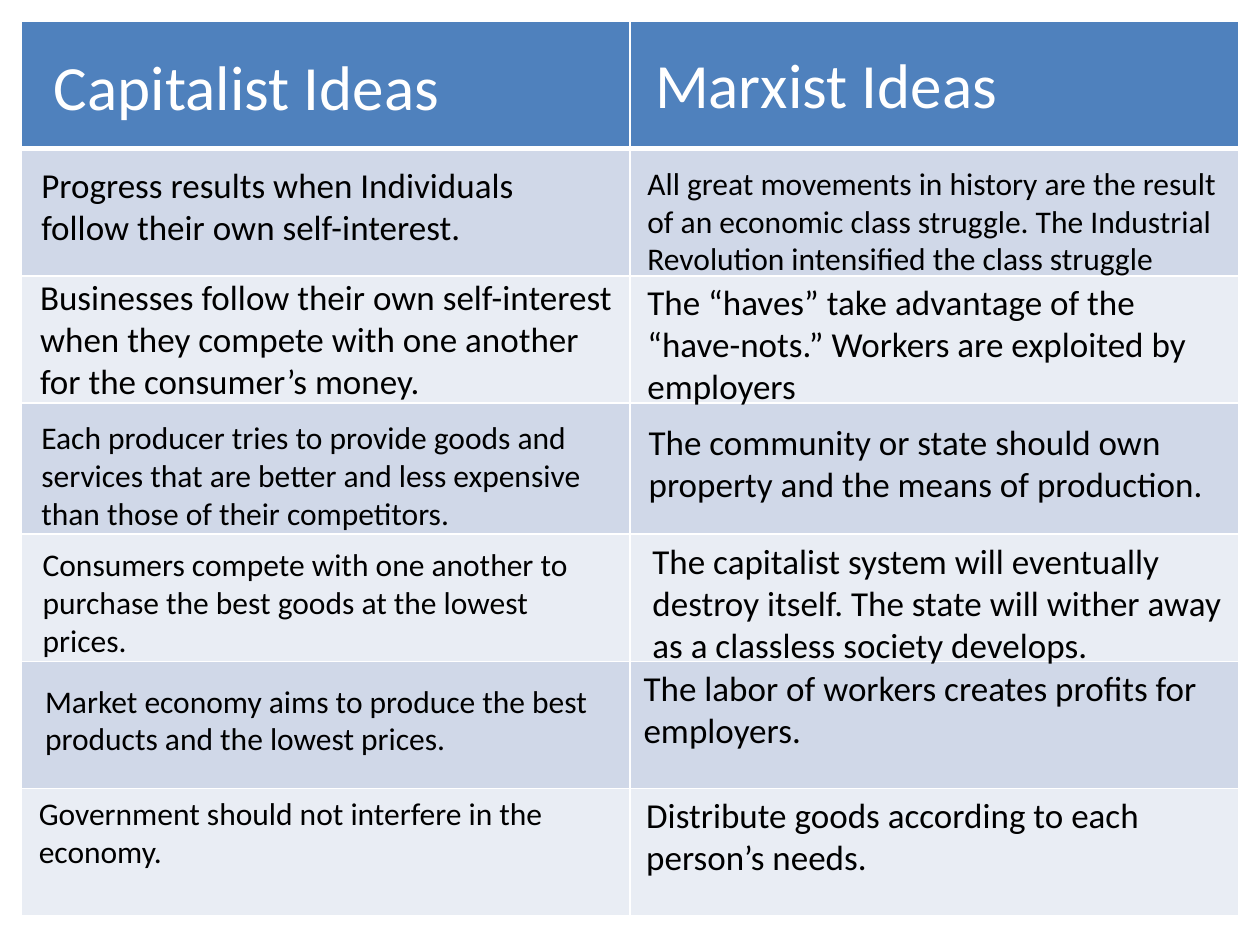
from lxml.etree import SubElement
from pptx import Presentation
from pptx.dml.color import RGBColor
from pptx.enum.text import MSO_AUTO_SIZE
from pptx.oxml.ns import qn
from pptx.util import Emu, Pt

FONT = "Calibri"
WHITE, BLACK, BLUE = "FFFFFF", "000000", "4F81BD"
BANDS = ("D0D8E8", "E9EDF4")
ROWS = [101, 101, 101, 104, 101, 101, 101]

CAPITALIST = [
    (23, 125, 467, 2, 20, "Progress results when Individuals follow their own self-interest."),
    (22, 214, 477, 3, 20, "Businesses follow their own self-interest when they compete "
                          "with one another for the consumer’s money."),
    (23, 327, 477, 3, 18, "Each producer tries to provide goods and services that are better "
                          "and less expensive than those of their competitors."),
    (24, 428, 477, 3, 18, "Consumers compete with one another to purchase the best goods "
                          "at the lowest prices."),
    (26, 536, 477, 2, 18, "Market economy aims to produce the best products and the lowest prices."),
    (21, 625, 477, 2, 18, "Government should not interfere in the economy."),
]
MARXIST = [
    (504, 125, 477, 3, 18, "All great movements in history are the result of an economic class "
                           "struggle. The Industrial Revolution intensified the class struggle"),
    (504, 218, 477, 3, 20, "The “haves” take advantage of the “have-nots.” "
                           "Workers are exploited by employers"),
    (505, 329, 477, 2, 20, "The community or state should own property and the means of production."),
    (508, 423, 477, 3, 20, "The capitalist system will eventually destroy itself. "
                           "The state will wither away as a classless society develops."),
    (501, 524, 477, 2, 20, "The labor of workers creates profits for employers."),
    (503, 625, 458, 3, 20, "Distribute goods according to each person’s needs."),
]


def px(n):
    return Emu(n * 9144)


def rgb(color):
    return RGBColor.from_string(color)


def write(p, text, size=18, color=BLACK, font=FONT):
    r = p.add_run()
    r.text = text
    r.font.size = Pt(size)
    r.font.name = font
    r.font.color.rgb = rgb(color)


class Deck:
    """Holds the style and the current slide, and adds elements to it."""

    def __init__(self, width, height):
        self.prs = Presentation()
        self.prs.slide_width, self.prs.slide_height = px(width), px(height)
        self.s = self.prs.slides.add_slide(self.prs.slide_layouts[6])

    def text(self, x, y, w, lines, size, text, color=BLACK):
        h = 11 + round(lines * size * 100 / 60)
        tf = self.s.shapes.add_textbox(px(x), px(y), px(w), px(h)).text_frame
        tf.word_wrap = True
        tf.auto_size = MSO_AUTO_SIZE.SHAPE_TO_FIT_TEXT
        write(tf.paragraphs[0], text, size=size, color=color)

    def borders(self, cell, top=1, bottom=1):
        tcPr = cell._tc.get_or_add_tcPr()
        for side, width in (("L", 1), ("R", 1), ("T", top), ("B", bottom)):
            ln = SubElement(tcPr, qn(f"a:ln{side}"), w=str(Pt(width)))
            fill = SubElement(ln, qn("a:solidFill"))
            SubElement(fill, qn("a:srgbClr"), val=WHITE)

    def table(self, x, y, col_width, cols, rows):
        frame = self.s.shapes.add_table(len(rows), cols, px(x), px(y),
                                        px(col_width * cols), px(sum(rows)))
        table = frame.table
        for col in table.columns:
            col.width = px(col_width)
        for i, height in enumerate(rows):
            table.rows[i].height = px(height)
            for cell in table.rows[i].cells:
                self.borders(cell, top=3 if i == 1 else 1, bottom=3 if i == 0 else 1)
                cell.fill.solid()
                cell.fill.fore_color.rgb = rgb(BANDS[(i - 1) % 2] if i else BLUE)


def main():
    deck = Deck(1000, 750)
    deck.table(17, 17, 483, 2, ROWS)
    deck.text(33, 33, 458, 1, 36, "Capitalist Ideas", color=WHITE)
    deck.text(510, 31, 458, 1, 36, "Marxist Ideas", color=WHITE)
    for idea in CAPITALIST + MARXIST:
        deck.text(*idea)
    deck.prs.save("out.pptx")


if __name__ == "__main__":
    main()
